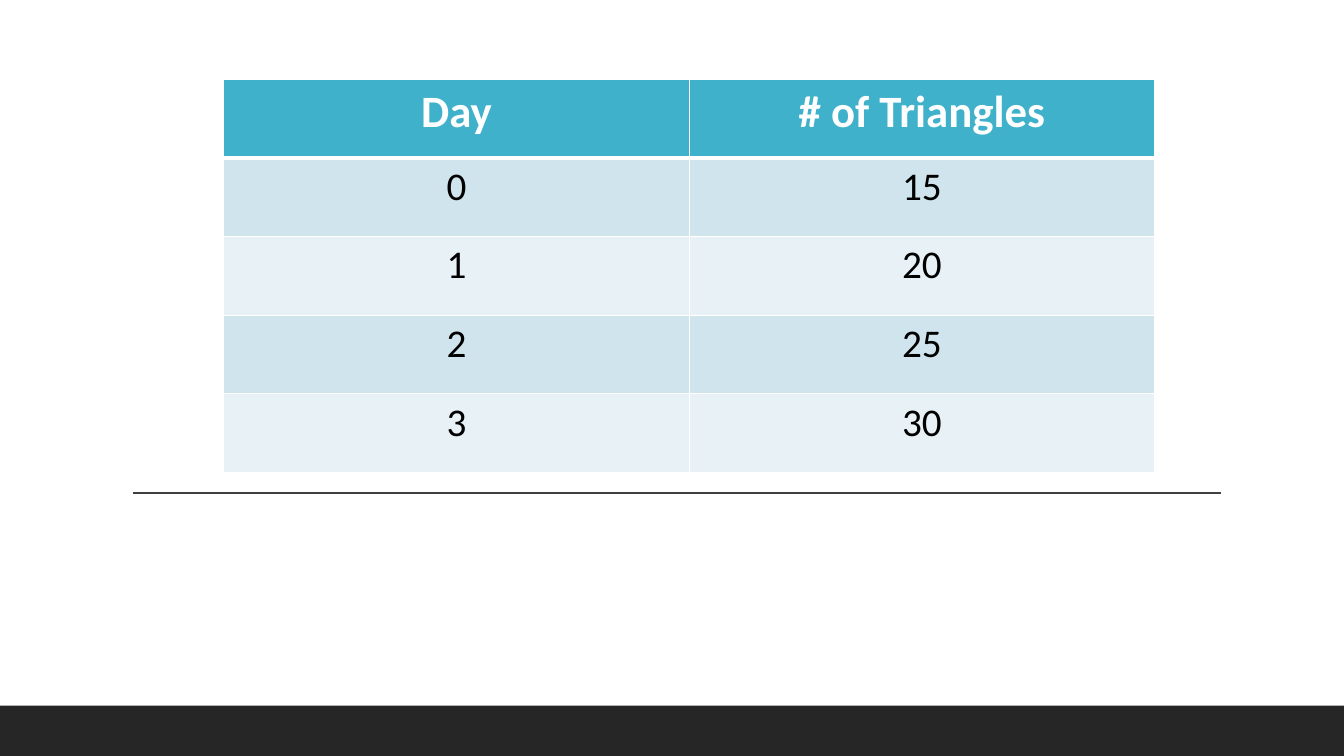
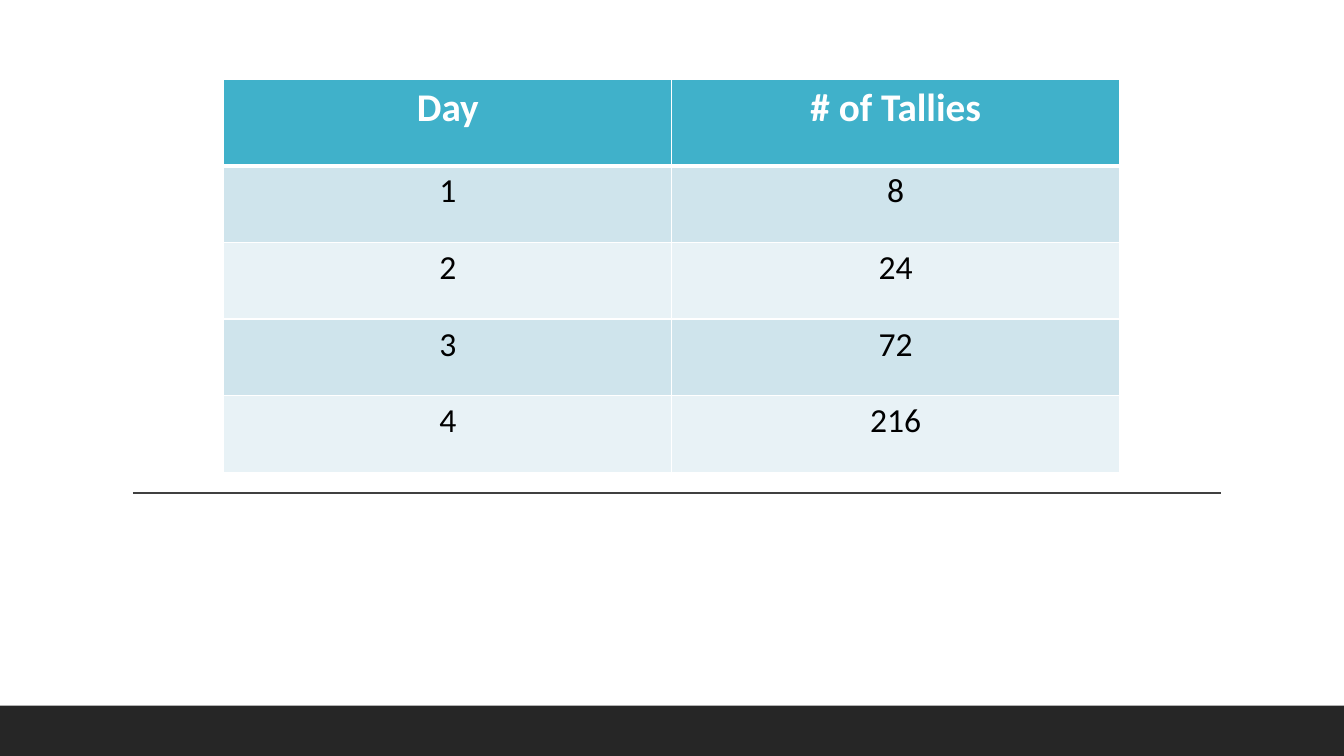
"""Builds two slides, each with a two-column growth table above a rule and a footer band."""
from lxml import etree
from pptx import Presentation
from pptx import util as u
from pptx.dml.color import RGBColor
from pptx.enum import shapes, text
from pptx.oxml.ns import qn

FONT = "Calibri"
COLOURS = {
    "band": "262626",
    "rule": "404040",
    "header": "40B1CA",
    "odd_row": "CFE4EC",
    "even_row": "E8F2F6",
    "border": "FFFFFF",
    "header_text": "FFFFFF",
    "body_text": "000000",
}
TABLE_LEFT, TABLE_TOP = 5.64, 2.0


def colour(name):
    """Return the named colour."""
    return RGBColor.from_string(COLOURS[name])


def dress_layout(page, deck):
    """Put the footer band and the rule on the layout that the pages share."""
    layout = page.slide_layout
    for holder in list(layout.placeholders):
        holder.element.getparent().remove(holder.element)

    band_height = u.Cm(1.27)
    band = page.shapes.add_shape(
        shapes.MSO_SHAPE.RECTANGLE,
        0, deck.slide_height - band_height, deck.slide_width, band_height)
    band.shadow.inherit = False
    band.fill.solid()
    band.fill.fore_color.rgb = colour("band")
    band.line.fill.background()

    rule = page.shapes.add_connector(
        shapes.MSO_CONNECTOR.STRAIGHT,
        u.Cm(3.35), u.Cm(12.42), u.Cm(30.78), u.Cm(12.42))
    rule.line.color.rgb = colour("rule")
    rule.line.width = u.Pt(1)
    etree.SubElement(rule.element.spPr, qn("a:effectLst"))

    for item in (band, rule):
        layout.shapes.element.append(item.element)


def set_borders(cell, top, bottom):
    """Draw the cell's borders, with the top and bottom widths in points."""
    properties = cell._tc.get_or_add_tcPr()
    widths = {"a:lnL": 1, "a:lnR": 1, "a:lnT": top, "a:lnB": bottom}
    for position, (tag, width) in enumerate(widths.items()):
        border = etree.Element(qn(tag), w=str(u.Pt(width)))
        fill = etree.SubElement(border, qn("a:solidFill"))
        etree.SubElement(fill, qn("a:srgbClr"), val=COLOURS["border"])
        properties.insert(position, border)


def fill_cell(cell, words, fill, font_colour, size, bold):
    """Write centred text on a coloured cell."""
    cell.fill.solid()
    cell.fill.fore_color.rgb = colour(fill)
    para = cell.text_frame.paragraphs[0]
    para.alignment = text.PP_ALIGN.CENTER
    span = para.add_run()
    span.text = words
    span.font.name = FONT
    span.font.size = u.Pt(size)
    span.font.bold = bold
    span.font.color.rgb = colour(font_colour)


def add_growth_table(page, rows, column_width, header_height, row_height, size):
    """Add a banded table whose header text is 4 points larger than its body."""
    columns = len(rows[0])
    heights = [header_height] + [row_height] * (len(rows) - 1)
    table = page.shapes.add_table(
        len(rows), columns, u.Cm(TABLE_LEFT), u.Cm(TABLE_TOP),
        u.Cm(column_width * columns), u.Cm(sum(heights))).table
    for column in table.columns:
        column.width = u.Cm(column_width)
    for index, (values, height) in enumerate(zip(rows, heights)):
        table.rows[index].height = u.Cm(height)
        for cell, value in zip(table.rows[index].cells, values):
            if index == 0:
                fill_cell(cell, value, "header", "header_text", size + 4, True)
            else:
                fill = "odd_row" if index % 2 else "even_row"
                fill_cell(cell, str(value), fill, "body_text", size, False)
            set_borders(cell, top=3 if index == 1 else 1,
                        bottom=3 if index == 0 else 1)


def main():
    """Build and save the deck."""
    deck = Presentation()
    deck.slide_width, deck.slide_height = u.Cm(33.87), u.Cm(19.05)
    blank = deck.slide_layouts[6]
    triangles, tallies = (deck.slides.add_slide(blank) for _ in range(2))
    dress_layout(triangles, deck)

    add_growth_table(
        triangles,
        [("Day", "# of Triangles"), (0, 15), (1, 20), (2, 25), (3, 30)],
        column_width=11.73, header_height=1.98, row_height=1.98, size=28)
    add_growth_table(
        tallies,
        [("Day", "# of Tallies"), (1, 8), (2, 24), (3, 72), (4, 216)],
        column_width=11.29, header_height=2.18, row_height=1.93, size=24)

    deck.save("out.pptx")


if __name__ == "__main__":
    main()
